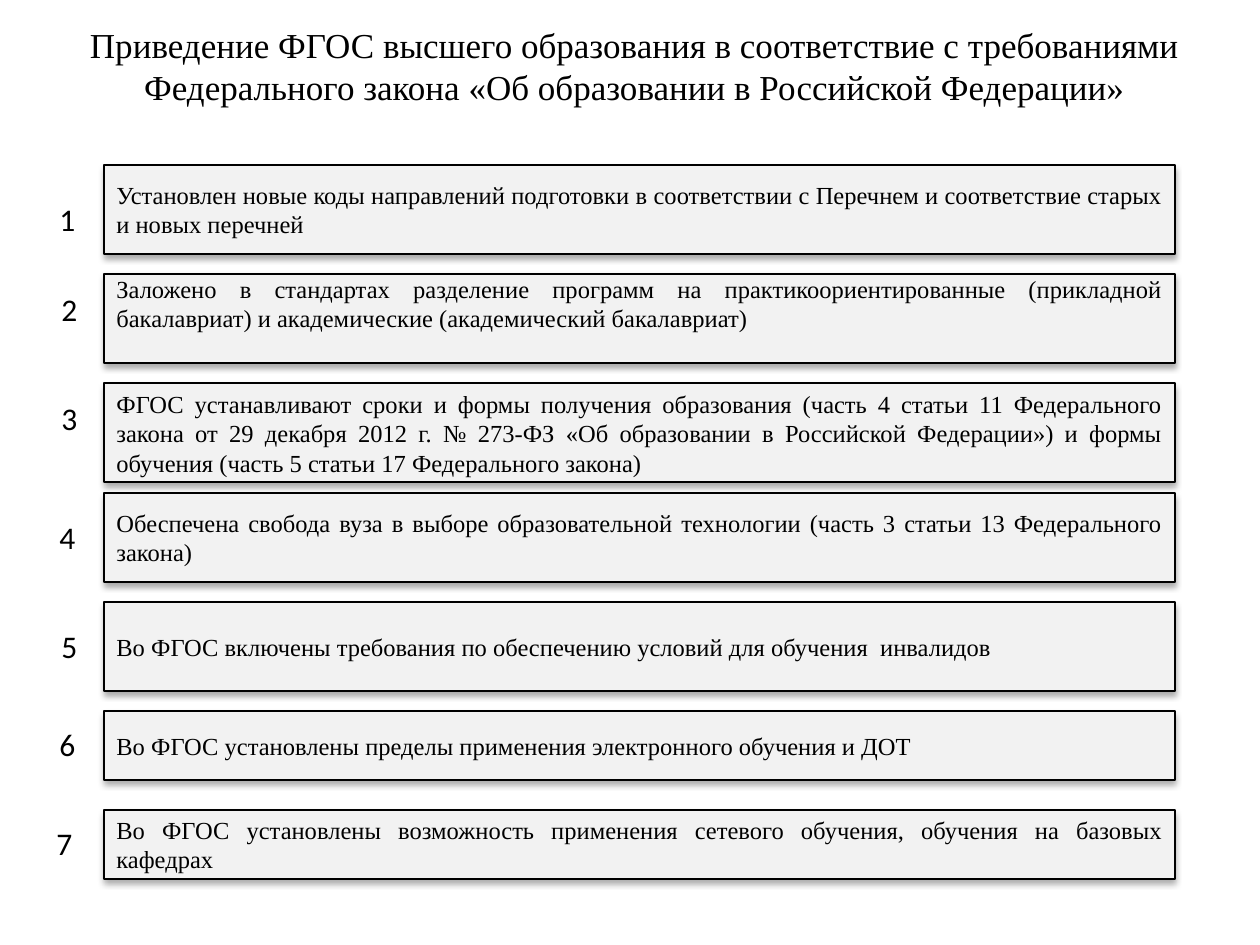
from lxml import etree
from pptx import Presentation
from pptx.dml.color import RGBColor
from pptx.enum.shapes import MSO_SHAPE
from pptx.enum.text import MSO_ANCHOR, MSO_AUTO_SIZE, PP_ALIGN
from pptx.oxml.ns import qn
from pptx.util import Emu, Pt

RECT = MSO_SHAPE.RECTANGLE
TOP, MIDDLE = MSO_ANCHOR.TOP, MSO_ANCHOR.MIDDLE
LEFT, CENTER, JUSTIFY = PP_ALIGN.LEFT, PP_ALIGN.CENTER, PP_ALIGN.JUSTIFY
FIT = MSO_AUTO_SIZE.SHAPE_TO_FIT_TEXT
SERIF, SANS = "Times New Roman", "Calibri"
COLORS = {"ink": "000000", "panel": "F2F2F2"}

TITLE = ("Приведение ФГОС высшего образования в соответствие с требованиями "
         "Федерального закона «Об образовании в Российской Федерации»")

# top, height, number left, number top, anchor, top inset, text
ITEMS = [
    (165, 89, 47, 194, MIDDLE, 6,
     "Установлен новые коды направлений подготовки в соответствии с Перечнем "
     "и соответствие старых и новых перечней"),
    (274, 89, 49, 284, TOP, 0,
     "Заложено в стандартах разделение программ на практикоориентированные "
     "(прикладной бакалавриат) и академические (академический бакалавриат)"),
    (383, 99, 49, 393, TOP, 6,
     "ФГОС устанавливают сроки и формы получения образования (часть 4 статьи 11 "
     "Федерального закона от 29 декабря 2012 г. № 273-ФЗ «Об образовании "
     "в Российской Федерации») и формы обучения (часть 5 статьи 17 "
     "Федерального закона)"),
    (493, 89, 47, 512, MIDDLE, 6,
     "Обеспечена свобода вуза в выборе образовательной технологии "
     "(часть 3 статьи 13 Федерального закона)"),
    (602, 89, 49, 621, MIDDLE, 6,
     "Во ФГОС включены требования по обеспечению условий для обучения  инвалидов"),
    (711, 69, 47, 719, MIDDLE, 6,
     "Во ФГОС установлены пределы применения электронного обучения и ДОТ"),
    (810, 69, 44, 818, MIDDLE, 6,
     "Во ФГОС установлены возможность применения сетевого обучения, "
     "обучения на базовых кафедрах"),
]


def px(n):
    """Turn whole pixels into EMU."""
    return Emu(round(n * 914400 / 126))


def color(name):
    """Look up a colour by name."""
    return RGBColor.from_string(COLORS[name])


def write(shape, text, size, font, align, anchor):
    """Put one styled paragraph into a shape."""
    frame = shape.text_frame
    frame.word_wrap = True
    frame.vertical_anchor = anchor
    frame.text = text
    para = frame.paragraphs[0]
    para.alignment = align
    style = para.runs[0].font
    style.size = Pt(size)
    style.name = font
    style.color.rgb = color("ink")
    return frame


def add_shadow(shape):
    """Give a shape a soft shadow straight below it."""
    shape.shadow.inherit = False
    effects = shape.element.spPr.find(qn("a:effectLst"))
    outer = etree.SubElement(effects, qn("a:outerShdw"), blurRad="44450",
                             dist="27940", dir="5400000", rotWithShape="0")
    tint = etree.SubElement(outer, qn("a:srgbClr"), val=COLORS["ink"])
    etree.SubElement(tint, qn("a:alpha"), val="32000")


def add_title(slide):
    """Add the centred heading."""
    box = slide.shapes.add_textbox(px(74), px(16), px(1121), px(100))
    write(box, TITLE, 20, SERIF, CENTER, MIDDLE)


def add_panel(slide, top, height, anchor, inset, text):
    """Add one grey panel with justified text."""
    panel = slide.shapes.add_shape(RECT, px(104), px(top), px(1071), px(height))
    panel.fill.solid()
    panel.fill.fore_color.rgb = color("panel")
    panel.line.color.rgb = color("ink")
    panel.line.width = Pt(0.75)
    add_shadow(panel)
    frame = write(panel, text, 14, SERIF, JUSTIFY, anchor)
    frame.margin_top = px(inset)


def add_number(slide, left, top, number):
    """Add the number beside a panel."""
    box = slide.shapes.add_textbox(px(left), px(top), px(42), px(50))
    frame = write(box, str(number), 18, SANS, LEFT, TOP)
    frame.word_wrap = False
    frame.auto_size = FIT


def main():
    """Build the slide and save it."""
    deck = Presentation()
    deck.slide_width, deck.slide_height = px(1260), px(945)
    slide = deck.slides.add_slide(deck.slide_layouts[6])
    add_title(slide)
    for number, item in enumerate(ITEMS, 1):
        top, height, left, num_top, anchor, inset, text = item
        add_panel(slide, top, height, anchor, inset, text)
        add_number(slide, left, num_top, number)
    deck.save("out.pptx")


if __name__ == "__main__":
    main()
